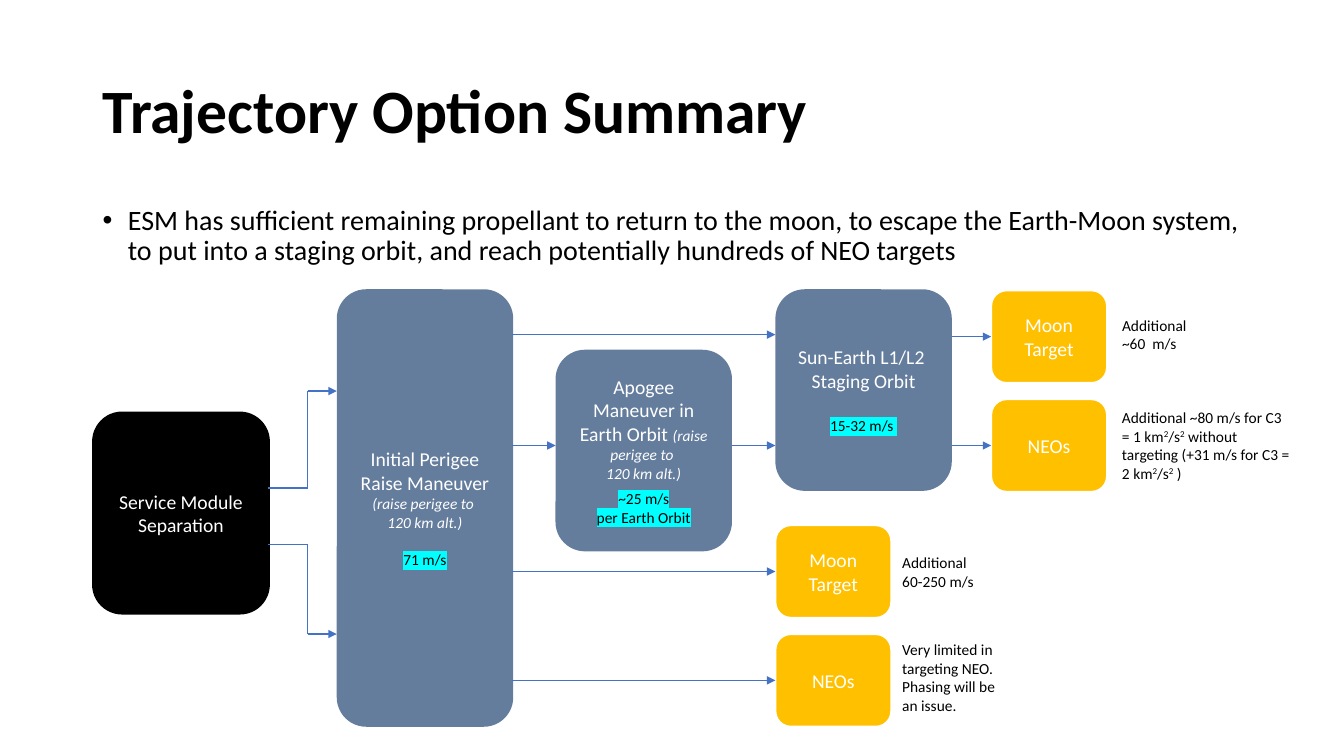
"""Build a flow slide that sums up the trajectory options."""
import pptx
import pptx.util
import pptx.dml.color
import pptx.enum.shapes
import pptx.enum.text
import pptx.oxml
import pptx.oxml.ns

ALIGN = pptx.enum.text.PP_ALIGN
ANCHOR = pptx.enum.text.MSO_ANCHOR
SHAPE = pptx.enum.shapes.MSO_SHAPE.ROUNDED_RECTANGLE
LINE = pptx.enum.shapes.MSO_CONNECTOR.STRAIGHT
Inches = pptx.util.Inches
Pt = pptx.util.Pt

THEME = {
    "font": "Calibri",
    "fills": {"start": "000000", "step": "657D9D", "goal": "FFC000"},
    "edges": {"start": ("000000", 1), "goal": ("FFFFFF", 1.5)},
    "arrow": ("4472C4", 1),
    "mark": "00FFFF",
    "text": {
        "title": {"size": 44, "color": "000000", "bold": True},
        "point": {"size": 20, "color": "000000"},
        "main": {"size": 14, "color": "FFFFFF"},
        "note": {"size": 11, "color": "FFFFFF", "italic": True},
        "tag": {"size": 11, "color": "000000"},
        "side": {"size": 11, "color": "000000"},
        "sup": {"size": 11, "color": "000000"},
    },
}

TITLE = [(0, [("Trajectory Option Summary", "title")])]
POINT = [(0, [("ESM has sufficient remaining propellant to return to the moon, "
               "to escape the Earth-Moon system, to put into a staging orbit, "
               "and reach potentially hundreds of NEO targets", "point")])]
MOON = [(0, [("Moon Target", "main")])]
NEO = [(0, [("NEOs", "main")])]
RAISE = [("(raise perigee to ", "note")]
ALT = (0, [("120 km alt.)", "note")])

BIG, TALL, SMALL = (1.75, 2), (1.75, 4.34), (1.15, 0.92)
BOXES = [
    ("start", 0.92, 4.09, BIG, [(0, [("Service Module Separation", "main")])]),
    ("step", 3.34, 2.87, TALL, [
        (0, [("Initial Perigee Raise Maneuver", "main")]),
        (0, RAISE), ALT, (13.4, [("71 m/s", "tag")])]),
    ("step", 5.51, 3.47, BIG, [
        (0, [("Apogee Maneuver in Earth Orbit ", "main")] + RAISE),
        ALT, (4.9, [("~25 m/s", "tag")]), (0, [("per Earth Orbit", "tag")])]),
    ("step", 7.69, 2.87, BIG, [
        (0, [("Sun-Earth L1/L2 ", "main")]), (0, [("Staging Orbit", "main")]),
        (17.1, [("15-32 m/s ", "tag")])]),
    ("goal", 9.83, 2.88, SMALL, MOON),
    ("goal", 9.83, 3.96, SMALL, NEO),
    ("goal", 7.69, 5.21, SMALL, MOON),
    ("goal", 7.69, 6.29, SMALL, NEO),
]

SIDES = [
    (11.03, 3.08, 1.02, 0.47, True, [(0, [("Additional ~60  m/s", "side")])]),
    (11.03, 4, 1.86, 0.84, True, [(0, [
        ("Additional ~80 m/s for C3 = 1 km", "side"), ("2", "sup"),
        ("/s", "side"), ("2", "sup"),
        (" without targeting (+31 m/s for C3 = 2 km", "side"), ("2", "sup"),
        ("/s", "side"), ("2", "sup"), (" )", "side")])]),
    (8.85, 5.44, 0.92, 0.47, False,
     [(0, [("Additional", "side")]), (0, [("60-250 m/s", "side")])]),
    (8.85, 6.3, 1.27, 0.84, True, [
        (0, [("Very limited in targeting NEO. Phasing will be an issue.", "side")])]),
]

FLOWS = [
    (5.08, 7.69, 3.32), (5.08, 5.51, 4.42), (7.26, 7.69, 4.42),
    (9.44, 9.83, 3.34), (9.44, 9.83, 4.42),
    (5.08, 7.69, 5.67), (5.08, 7.69, 6.75),
]
FORKS = [(4.84, 3.88), (5.4, 6.29)]
EXIT, BEND, ENTRY = 2.66, 3.05, 3.34


def rgb(code):
    """Turn a hex code into a colour."""
    return pptx.dml.color.RGBColor.from_string(code)


def node(name, **attrs):
    """Make one drawing element."""
    item = pptx.oxml.parse_xml(f"<a:{name} {pptx.oxml.ns.nsdecls('a')}/>")
    for key, value in attrs.items():
        item.set(key, value)
    return item


def put(target, values):
    """Set each attribute in a dict of format values."""
    for key, value in values.items():
        setattr(target, key, value)


def add_run(para, words, style):
    """Add one styled run."""
    run = para.add_run()
    run.text = words
    look = dict(THEME["text"][style])
    run.font.color.rgb = rgb(look.pop("color"))
    put(run.font, {**look, "size": Pt(look["size"]), "name": THEME["font"]})
    props = run._r.get_or_add_rPr()
    if style == "sup":
        props.set("baseline", "30000")
    if style == "tag":
        mark = node("highlight")
        mark.append(node("srgbClr", val=THEME["mark"]))
        props.find(pptx.oxml.ns.qn("a:solidFill")).addnext(mark)


def write(shape, paras, frame, form, bullet=False):
    """Fill a shape with paragraphs."""
    put(shape.text_frame, {"word_wrap": True, **frame})
    for i, (gap, runs) in enumerate(paras):
        para = shape.text_frame.paragraphs[0] if i == 0 else shape.text_frame.add_paragraph()
        if bullet:
            props = para._p.get_or_add_pPr()
            props.set("marL", str(Inches(0.25)))
            props.set("indent", str(Inches(-0.25)))
            props.append(node("buFont", typeface="Arial"))
            props.append(node("buChar", char="•"))
        put(para, {"space_before": Pt(gap), **form})
        for words, style in runs:
            add_run(para, words, style)


def add_text(slide, place, paras, frame, form, bullet=False):
    """Add a text box."""
    box = slide.shapes.add_textbox(*map(Inches, place))
    write(box, paras, frame, form, bullet)


def add_box(slide, kind, left, top, size, paras):
    """Add one rounded box of the flow."""
    box = slide.shapes.add_shape(SHAPE, *map(Inches, (left, top, *size)))
    box.shadow.inherit = False
    box.fill.solid()
    box.fill.fore_color.rgb = rgb(THEME["fills"][kind])
    if kind in THEME["edges"]:
        color, width = THEME["edges"][kind]
        box.line.color.rgb = rgb(color)
        box.line.width = Pt(width)
    else:
        box.line.fill.background()
    write(box, paras, {"vertical_anchor": ANCHOR.MIDDLE}, {"alignment": ALIGN.CENTER})


def add_line(slide, start, end, head=False):
    """Add a straight line, with an arrowhead if asked."""
    line = slide.shapes.add_connector(LINE, *map(Inches, (*start, *end)))
    color, width = THEME["arrow"]
    line.line.color.rgb = rgb(color)
    line.line.width = Pt(width)
    if head:
        line.line._get_or_add_ln().append(node("tailEnd", type="triangle"))
    line._element.spPr.append(node("effectLst"))


def main():
    """Build and save the slide."""
    deck = pptx.Presentation()
    put(deck, {"slide_width": Inches(13.33), "slide_height": Inches(7.5)})
    slide = deck.slides.add_slide(deck.slide_layouts[6])
    tight = {"line_spacing": 0.9}
    middle = {"vertical_anchor": ANCHOR.MIDDLE}
    add_text(slide, (0.92, 0.4, 11.5, 1.45), TITLE, middle, tight)
    add_text(slide, (0.92, 2, 11.5, 4.76), POINT, {}, tight, True)
    for box in BOXES:
        add_box(slide, *box)
    for *place, wrap, paras in SIDES:
        add_text(slide, place, paras, {**middle, "word_wrap": wrap}, {})
    for left, right, y in FLOWS:
        add_line(slide, (left, y), (right, y), True)
    for low, high in FORKS:
        add_line(slide, (EXIT, low), (BEND, low))
        add_line(slide, (BEND, low), (BEND, high))
        add_line(slide, (BEND, high), (ENTRY, high), True)
    deck.save("out.pptx")


if __name__ == "__main__":
    main()
